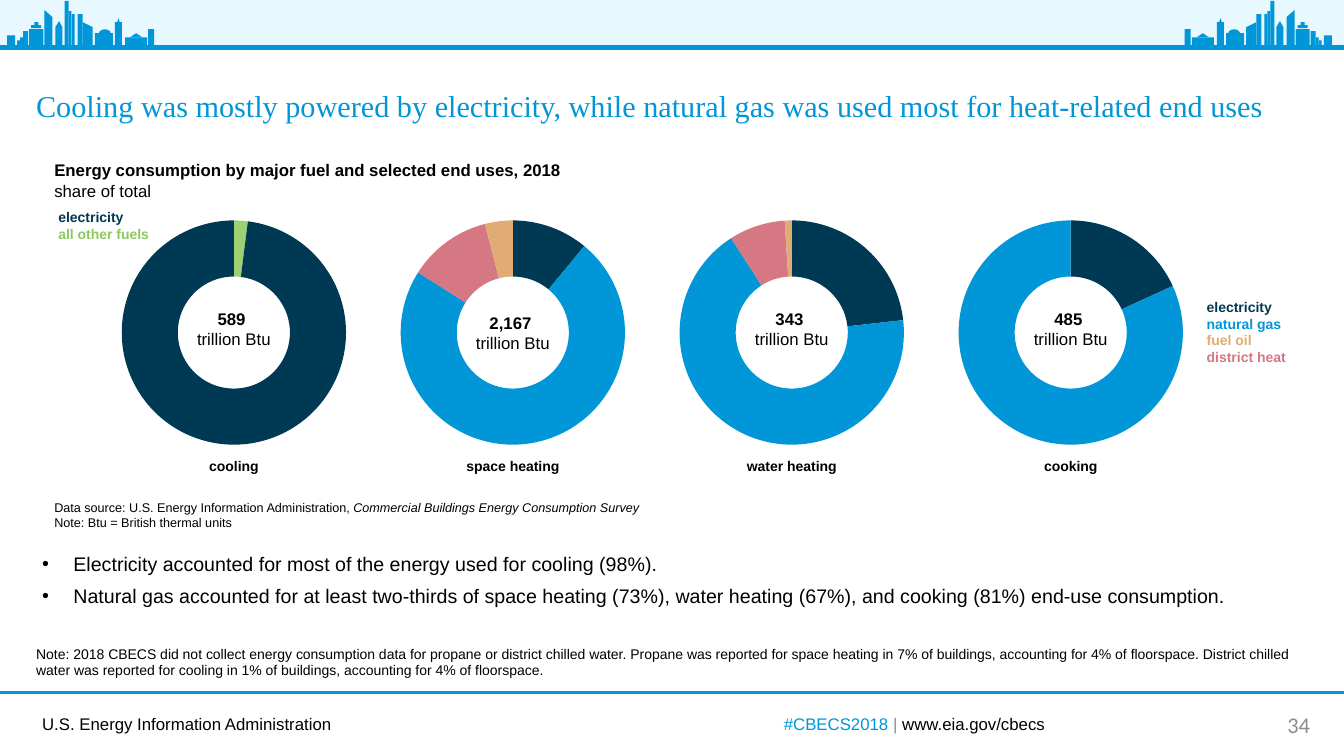
from dataclasses import dataclass

from lxml import etree
from pptx import Presentation
from pptx import util as u
from pptx.chart import data as chart_data
from pptx.dml.color import RGBColor
from pptx.enum import chart as charts, shapes, text
from pptx.oxml.ns import qn

WIDTH, HEIGHT = 13.33, 7.5


@dataclass(frozen=True)
class Theme:
    blue: str = "0096D7"
    sky: str = "E7F8FF"
    navy: str = "003953"
    rose: str = "D57883"
    sand: str = "E1AB76"
    green: str = "9BD174"
    green_text: str = "8CCA5E"
    grey: str = "8C8C8C"
    black: str = "000000"
    body_font: str = "Arial"
    title_font: str = "Times New Roman"
    number_font: str = "Calibri"
    title: float = 21.6
    bullet: float = 14
    page: float = 16
    body: float = 12
    label: float = 10
    source: float = 9


T = Theme()
FUEL_COLOURS = {"electricity": T.navy, "natural gas": T.blue,
                "district heat": T.rose, "fuel oil": T.sand,
                "all other fuels": T.green}
HEAT_FUELS = ("electricity", "natural gas", "district heat", "fuel oil")
# end use, total, top of the total, share by fuel
END_USES = [
    ("cooling", "589 ", 3.01, {"all other fuels": 2, "electricity": 98}),
    ("space heating", "2,167 ", 3.05, dict(zip(HEAT_FUELS, (11, 73, 12, 4)))),
    ("water heating", "343 ", 3.01, dict(zip(HEAT_FUELS, (23, 67, 8, 1)))),
    ("cooking", "485 ", 3.01, dict(zip(HEAT_FUELS, (18, 81, 0, 0)))),
]

GROUND = 0.46
MIRROR = 13.28  # left edge plus right edge of a building and its reflection
# left, top, width; each stands on the ground
TOWERS = [
    (0.07, 0.35, 0.08), (0.17, 0.4, 0.03), (0.2, 0.37, 0.03), (0.23, 0.31, 0.05),
    (0.29, 0.29, 0.14), (0.44, 0.17, 0.08), (0.55, 0.27, 0.07), (0.64, 0.01, 0.04),
    (0.68, 0.11, 0.03), (0.71, 0.14, 0.03), (0.77, 0.14, 0.05), (0.82, 0.27, 0.1),
    (0.94, 0.33, 0.18), (1.14, 0.22, 0.07), (1.24, 0.37, 0.22), (1.47, 0.29, 0.06),
]
BOX, DOME = shapes.MSO_SHAPE.RECTANGLE, shapes.MSO_SHAPE.OVAL
GABLE, SLOPE = shapes.MSO_SHAPE.ISOSCELES_TRIANGLE, shapes.MSO_SHAPE.RIGHT_TRIANGLE
ROOFS = [
    (BOX, 0.31, 0.25, 0.1, 0.03), (BOX, 0.34, 0.22, 0.04, 0.03),
    (SLOPE, 0.44, 0.1, 0.08, 0.07), (GABLE, 0.55, 0.21, 0.07, 0.06),
    (SLOPE, 0.82, 0.22, 0.1, 0.05), (DOME, 0.98, 0.29, 0.12, 0.09),
    (GABLE, 1.14, 0.18, 0.07, 0.11), (GABLE, 1.29, 0.33, 0.12, 0.04),
]


def inches(*lengths):
    return [u.Inches(length) for length in lengths]


def rgb(colour):
    return RGBColor.from_string(colour)


def add_text(slide, box, paragraphs, size=T.body, font=T.body_font, colour=T.black,
             bold=False, align=None, anchor=text.MSO_ANCHOR.TOP, bullet=False):
    """Each paragraph is a list of (words, overrides) runs."""
    frame = slide.shapes.add_textbox(*inches(*box)).text_frame
    frame.word_wrap = True
    frame.vertical_anchor = anchor
    for i, runs in enumerate(paragraphs):
        paragraph = frame.paragraphs[0] if i == 0 else frame.add_paragraph()
        paragraph.alignment = align
        if bullet:
            paragraph.space_after = u.Pt(6)
            props = paragraph._p.get_or_add_pPr()
            props.set("marL", str(u.Inches(0.31)))
            props.set("indent", str(-u.Inches(0.31)))
            etree.SubElement(props, qn("a:buFont")).set("typeface", T.body_font)
            etree.SubElement(props, qn("a:buChar")).set("char", "•")
        for words, override in runs:
            run = paragraph.add_run()
            run.text = words
            run.font.size, run.font.name = u.Pt(size), font
            run.font.bold = override.get("bold", bold)
            run.font.italic = override.get("italic", False)
            run.font.color.rgb = rgb(override.get("colour", colour))


def add_rule(parent, y, weight):
    rule = parent.add_connector(shapes.MSO_CONNECTOR.STRAIGHT, *inches(0, y, WIDTH, y))
    rule.line.color.rgb = rgb(T.blue)
    rule.line.width = u.Pt(weight)
    etree.SubElement(rule._element.spPr, qn("a:effectLst"))


def add_block(parent, kind, box, fill=T.blue, flipped=False):
    block = parent.add_shape(kind, *inches(*box))
    block.shadow.inherit = False
    block.fill.solid()
    block.fill.fore_color.rgb = rgb(fill)
    block.line.fill.background()
    if flipped:
        block._element.spPr.find(qn("a:xfrm")).set("flipH", "1")


def add_banner(slide):
    banner = slide.shapes.add_group_shape().shapes
    add_block(banner, BOX, (0, 0, WIDTH, 0.45), T.sky)
    add_rule(banner, 0.47, 3.5)
    buildings = [(BOX, x, y, w, GROUND - y) for x, y, w in TOWERS] + ROOFS
    for flipped in (False, True):
        for kind, x, y, w, h in buildings:
            left = MIRROR - x - w if flipped else x
            add_block(banner, kind, (left, y, w, h), flipped=flipped)


def add_footer(slide):
    middle, centre = text.MSO_ANCHOR.MIDDLE, text.PP_ALIGN.CENTER
    add_rule(slide.shapes, 6.87, 2.25)
    add_text(slide, (0.32, 7.03, 3.7, 0.3), [[("U.S. Energy Information Administration", {})]])
    add_text(slide, (6.82, 6.98, 4.5, 0.4),
             [[("#CBECS2018 ", {"colour": T.blue}), ("| ", {"colour": T.grey}),
               ("www.eia.gov/cbecs", {})]], align=centre, anchor=middle)
    add_text(slide, (12.58, 6.99, 0.6, 0.4), [[("34", {})]], size=T.page,
             font=T.number_font, colour=T.grey, align=centre, anchor=middle)


def add_doughnut(slide, left, top, side, end_use, total, total_top, shares):
    values = chart_data.CategoryChartData()
    values.categories = list(shares)
    values.add_series(end_use, list(shares.values()))
    chart = slide.shapes.add_chart(charts.XL_CHART_TYPE.DOUGHNUT,
                                   *inches(left, top, side, side), values).chart
    chart.has_legend = chart.has_title = False
    chart.font.name, chart.font.size = T.number_font, u.Pt(T.label)
    chart.font.color.rgb = rgb(T.black)
    plot = chart.plots[0]
    plot.vary_by_categories = True
    plot._element.find(qn("c:holeSize")).set("val", "75")
    for i, fuel in enumerate(shares):
        style = plot.series[0].points[i].format
        style.fill.solid()
        style.fill.fore_color.rgb = rgb(FUEL_COLOURS[fuel])
        style.line.fill.background()
    area = chart._chartSpace.chart.plotArea
    for old in area.findall(qn("c:layout")):
        area.remove(old)
    layout = etree.Element(qn("c:layout"))
    area.insert(0, layout)
    manual = etree.SubElement(layout, qn("c:manualLayout"))
    for tag, value in (("layoutTarget", "inner"), ("xMode", "edge"), ("yMode", "edge"),
                       ("x", 0.055), ("y", 0.055), ("w", 0.89), ("h", 0.89)):
        etree.SubElement(manual, qn("c:" + tag)).set("val", str(value))

    centre = left + side / 2
    add_text(slide, (centre - 0.985, total_top, 1.97, 0.5),
             [[(total, {"bold": True})], [("trillion Btu", {})]], align=text.PP_ALIGN.CENTER)
    add_text(slide, (centre - 0.65, top + side - 0.06, 1.3, 0.27), [[(end_use, {})]],
             size=T.label, bold=True, align=text.PP_ALIGN.CENTER)


def add_fuel_key(slide, box, fuels):
    add_text(slide, box, [[(fuel, {"colour": colour})] for fuel, colour in fuels],
             size=T.label, bold=True)


def add_figure(slide):
    add_text(slide, (0.44, 1.54, 6.4, 0.5),
             [[("Energy consumption by major fuel and selected end uses, 2018", {"bold": True})],
              [("share of total", {})]])
    for column, end_use in enumerate(END_USES):
        add_doughnut(slide, 1.07 + column * 8.3 / 3, 2.05, 2.5, *end_use)
    add_fuel_key(slide, (0.48, 2.02, 1.19, 0.44),
                 [("electricity", T.navy), ("all other fuels", T.green_text)])
    add_fuel_key(slide, (11.87, 2.91, 1.2, 0.8),
                 [(fuel, FUEL_COLOURS[fuel])
                  for fuel in ("electricity", "natural gas", "fuel oil", "district heat")])
    add_text(slide, (0.44, 4.91, 6.4, 0.4),
             [[("Data source: U.S. Energy Information Administration, ", {}),
               ("Commercial Buildings Energy Consumption Survey", {"italic": True})],
              [("Note: Btu = British thermal units", {})]], size=T.source)


def add_findings(slide):
    add_text(slide, (0.32, 5.43, 12.26, 0.66), [
        [("Electricity accounted for most of the energy used for cooling (98%).", {})],
        [("Natural gas accounted for at least two-thirds of space heating (73%), water heating "
          "(67%), and cooking (81%) end-use consumption.", {})]], size=T.bullet, bullet=True)
    add_text(slide, (0.26, 6.35, 12.75, 0.44), [[(
        "Note: 2018 CBECS did not collect energy consumption data for propane or district chilled "
        "water. Propane was reported for space heating in 7% of buildings, accounting for 4% of "
        "floorspace. District chilled water was reported for cooling in 1% of buildings, "
        "accounting for 4% of floorspace.", {})]], size=T.label)


def main():
    deck = Presentation()
    deck.slide_width, deck.slide_height = inches(WIDTH, HEIGHT)
    slide = deck.slides.add_slide(deck.slide_layouts[6])
    add_banner(slide)
    add_text(slide, (0.26, 0.45, 12.86, 0.83),
             [[("Cooling was mostly powered by electricity, while natural gas was used most for "
                "heat-related end uses", {})]], size=T.title, font=T.title_font,
             colour=T.blue, anchor=text.MSO_ANCHOR.BOTTOM)
    add_figure(slide)
    add_findings(slide)
    add_footer(slide)
    deck.save("out.pptx")


if __name__ == "__main__":
    main()
